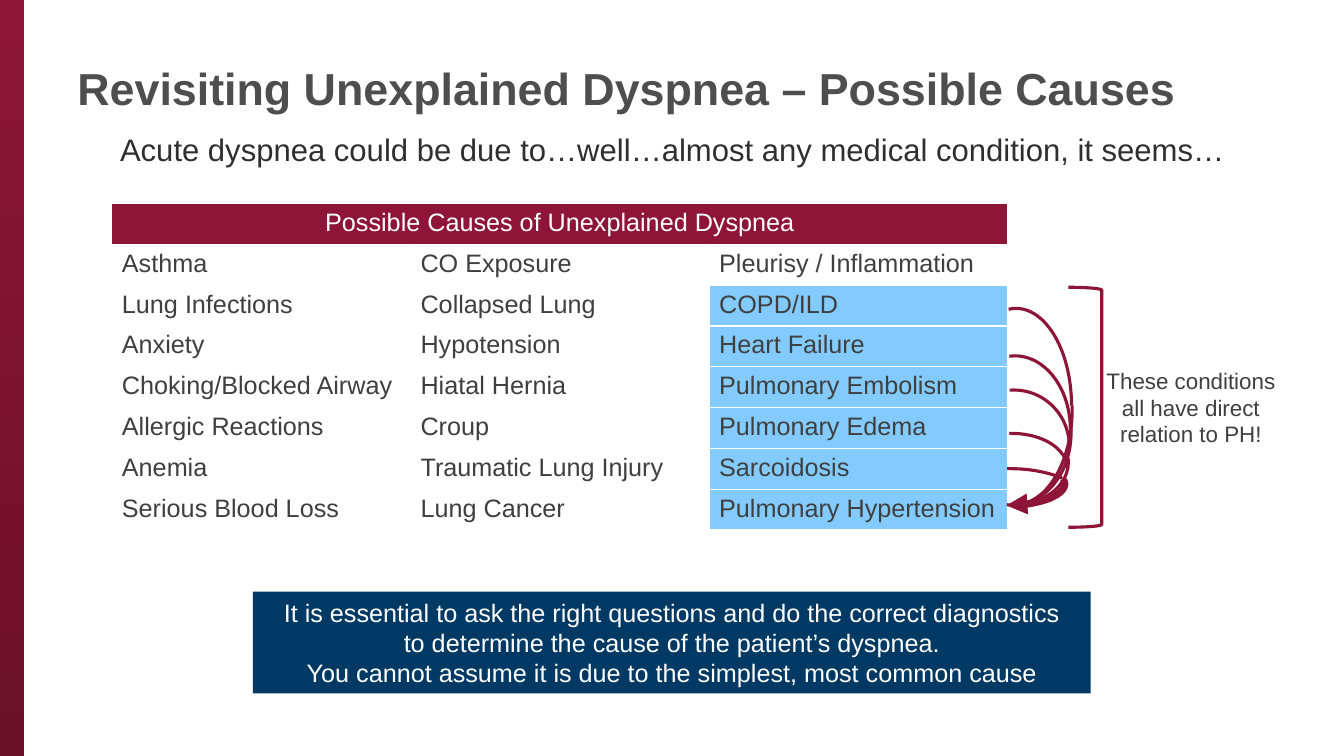
from dataclasses import dataclass

from lxml.etree import SubElement
from pptx import Presentation
from pptx.dml.color import RGBColor
from pptx.enum.shapes import MSO_SHAPE
from pptx.enum.text import MSO_ANCHOR, PP_ALIGN
from pptx.oxml.ns import qn
from pptx.util import Pt


@dataclass(frozen=True)
class Theme:
    font: str = "Arial"
    wine: str = "8E1537"
    dark: str = "6B1029"
    navy: str = "003A64"
    sky: str = "83CBFF"
    white: str = "FFFFFF"
    gray: str = "4D4E4D"
    ink: str = "2F2F2F"
    text: str = "3F3F3F"
    title: float = 32
    lead: float = 22.2
    body: float = 18
    note: float = 16
    thin: float = 2.25
    thick: float = 5


class Board:
    def __init__(self, slide, theme):
        self.slide, self.theme = slide, theme

    def fill_text(self, frame, paras, size, color, align=PP_ALIGN.CENTER, bold=False):
        """Each paragraph is a list of lines."""
        for i, lines in enumerate(paras):
            para = frame.add_paragraph() if i else frame.paragraphs[0]
            para.alignment = align
            for j, line in enumerate(lines):
                if j:
                    para.add_line_break()
                run = para.add_run()
                run.text = line
                font = run.font
                font.name, font.size, font.bold = self.theme.font, Pt(size), bold
                font.color.rgb = RGBColor.from_string(color)

    def label(self, box, line, size, color, align=PP_ALIGN.CENTER,
              bold=False, anchor=MSO_ANCHOR.TOP):
        frame = self.slide.shapes.add_textbox(*map(Pt, box)).text_frame
        frame.word_wrap = True
        frame.vertical_anchor = anchor
        self.fill_text(frame, [[line]], size, color, align, bold)
        return frame

    def block(self, box, color, end=None):
        shape = self.slide.shapes.add_shape(MSO_SHAPE.RECTANGLE, *map(Pt, box))
        shape.shadow.inherit = False
        shape.line.fill.background()
        if end:
            shape.fill.gradient()
            shape.fill.gradient_angle = 270
            for stop, tone in zip(shape.fill.gradient_stops, (color, end)):
                stop.color.rgb = RGBColor.from_string(tone)
        else:
            shape.fill.solid()
            shape.fill.fore_color.rgb = RGBColor.from_string(color)
        return shape

    def curve(self, kind, box, width, home=None):
        shapes = (home or self.slide).shapes
        shape = shapes.add_shape(kind, *map(Pt, box))
        shape.shadow.inherit = False
        shape.fill.background()
        shape.line.width = Pt(width)
        shape.line.color.rgb = RGBColor.from_string(self.theme.wine)
        return shape

    def arc(self, home, box, turn, start, stop, tip):
        width = self.theme.thick if tip else self.theme.thin
        shape = self.curve(MSO_SHAPE.ARC, box, width, home)
        shape.rotation = turn
        shape.adjustments[0], shape.adjustments[1] = start, stop
        if tip:
            line = shape.element.spPr.find(qn("a:ln"))
            SubElement(line, qn("a:tailEnd"), type="triangle")

    def table(self, box, head, rows, marked):
        theme = self.theme
        count, cols = len(rows) + 1, len(rows[0])
        grid = self.slide.shapes.add_table(count, cols, *map(Pt, box)).table
        grid.horz_banding = False
        for row in grid.rows:
            row.height = Pt(box[3] / count)
        top = grid.cell(0, 0)
        top.merge(grid.cell(0, cols - 1))
        self.tint(top, theme.wine)
        self.fill_text(top.text_frame, [[head]], theme.body, theme.white)
        for r, row in enumerate(rows, 1):
            for c, word in enumerate(row):
                cell = grid.cell(r, c)
                self.tint(cell, theme.sky if word in marked else None)
                self.fill_text(cell.text_frame, [[word]], theme.body, theme.text,
                               PP_ALIGN.LEFT)

    def tint(self, cell, color):
        if color:
            cell.fill.solid()
            cell.fill.fore_color.rgb = RGBColor.from_string(color)
        else:
            cell.fill.background()


CAUSES = [
    ("Asthma", "CO Exposure", "Pleurisy / Inflammation"),
    ("Lung Infections", "Collapsed Lung", "COPD/ILD"),
    ("Anxiety", "Hypotension", "Heart Failure"),
    ("Choking/Blocked Airway", "Hiatal Hernia", "Pulmonary Embolism"),
    ("Allergic Reactions", "Croup", "Pulmonary Edema"),
    ("Anemia", "Traumatic Lung Injury", "Sarcoidosis"),
    ("Serious Blood Loss", "Lung Cancer", "Pulmonary Hypertension"),
]

# Arc start angle, in adjustment units
START = 159.36

# Box, rotation, end angle, arrowhead
ARCS = [
    ((686.2, 220.3, 79.2, 139), 0, 0, False),
    ((657.4, 252, 135.4, 81.4), 90, 0, False),
    ((685.4, 254.2, 79.2, 105.1), 0, 0, False),
    ((673.2, 268.6, 102.2, 81.4), 90, 0, False),
    ((692.6, 290.2, 61.2, 79.9), 90, 4.41, False),
    ((684.7, 278.6, 79.2, 80.6), 0, 0, False),
    ((703.4, 303.8, 31, 83.5), 90, 0, True),
    ((683.3, 309.6, 79.2, 50.4), 0, 0, False),
    ((666.7, 334.8, 109.4, 50.4), 0, 200.21, False),
]


def main():
    deck = Presentation()
    deck.slide_width, deck.slide_height = Pt(960), Pt(540)
    slide = deck.slides.add_slide(deck.slide_layouts[6])
    theme = Theme()
    board = Board(slide, theme)

    # Side bar
    board.block((-0.7, 0, 18, 540.7), theme.wine, theme.dark)

    # Title and lead line
    board.label((48.2, 15.8, 846, 93.6),
                "Revisiting Unexplained Dyspnea – Possible Causes",
                theme.title, theme.gray, PP_ALIGN.LEFT, True, MSO_ANCHOR.MIDDLE)
    lead = board.label(
        (57.6, 89.3, 846, 57.6),
        "Acute dyspnea could be due to…well…almost any medical condition, it seems…",
        theme.lead, theme.ink)
    lead.paragraphs[0].space_before = Pt(10)

    # Table of causes, with those tied to PH marked
    marked = [row[-1] for row in CAUSES[1:]]
    board.table((79.9, 145.4, 640, 233.3),
                "Possible Causes of Unexplained Dyspnea", CAUSES, marked)

    # Arcs leading to the last cause
    group = slide.shapes.add_group_shape()
    for box, turn, stop, tip in ARCS:
        board.arc(group, box, turn, START, stop, tip)

    # Bracket and its note
    board.label((782.6, 258.5, 136.1, 65.5),
                "These conditions all have direct relation to PH!",
                theme.note, theme.text)
    board.curve(MSO_SHAPE.RIGHT_BRACKET, (763.2, 205.2, 23.8, 171.4), theme.thin)

    # Closing message
    box = board.block((180.7, 422.6, 598.3, 72.7), theme.navy)
    box.text_frame.word_wrap = True
    box.text_frame.vertical_anchor = MSO_ANCHOR.MIDDLE
    board.fill_text(box.text_frame, [
        ["It is essential to ask the right questions and do the correct diagnostics",
         "to determine the cause of the patient’s dyspnea."],
        ["You cannot assume it is due to the simplest, most common cause"],
    ], theme.body, theme.white)

    deck.save("out.pptx")


if __name__ == "__main__":
    main()
